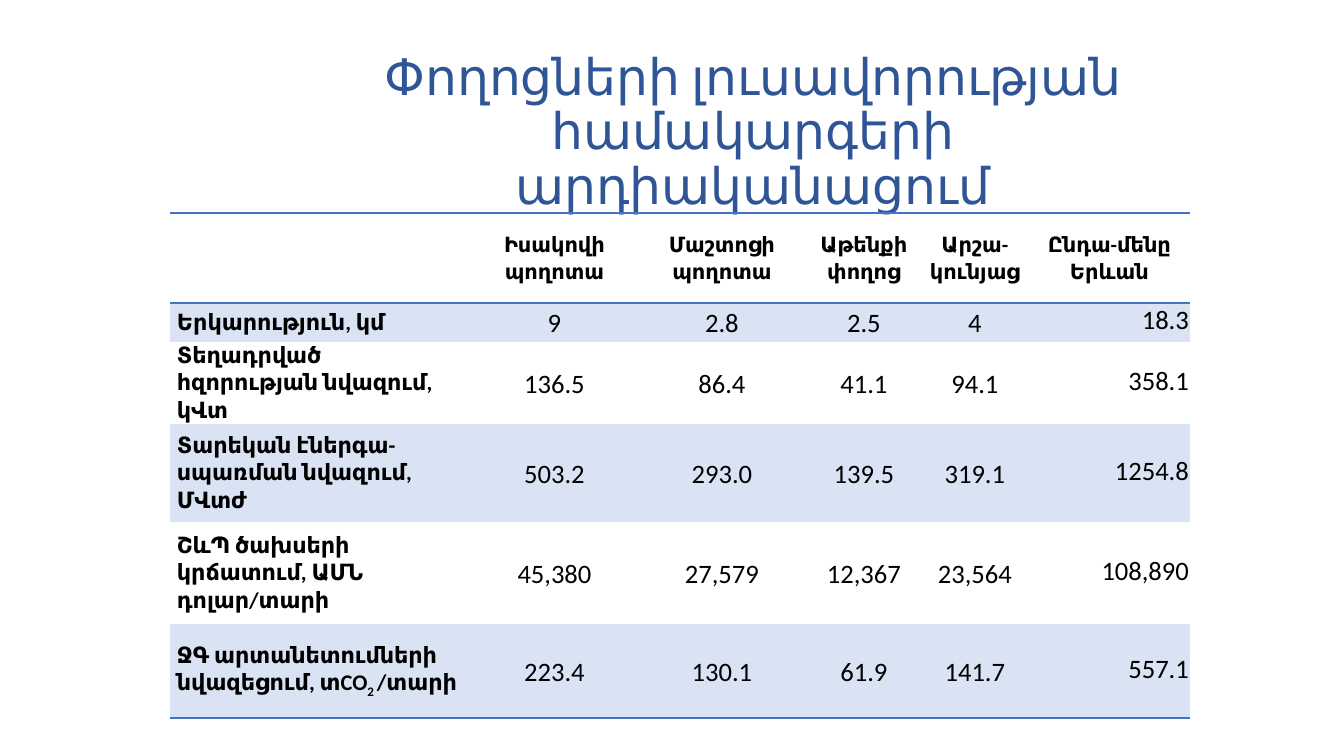
from lxml.etree import SubElement
from pptx import Presentation
from pptx.dml.color import RGBColor
from pptx.enum.text import MSO_ANCHOR as Anchor, MSO_AUTO_SIZE as AutoSize, PP_ALIGN as Align
from pptx.oxml.ns import qn
from pptx.util import Emu, Pt

COLORS = {"title": "2F5597", "text": "000000", "rule": "4472C4", "band": "DAE3F3"}
FONT = "Calibri"
PLAIN_TABLE_STYLE = "{2D5ABB26-0587-4C30-8999-92F81FD0307C}"

TITLE = "Փողոցների լուսավորության համակարգերի արդիականացում"
STREETS = ["", "Իսակովի պողոտա", "Մաշտոցի պողոտա", "Աթենքի փողոց",
           "Արշա-կունյաց", "Ընդա-մենը\nԵրևան"]
SAVINGS = [
    ["Երկարություն, կմ", "9", "2.8", "2.5", "4", "18.3"],
    ["Տեղադրված հզորության նվազում, կՎտ", "136.5", "86.4", "41.1", "94.1", "358.1"],
    ["Տարեկան էներգա-սպառման նվազում, ՄՎտժ", "503.2", "293.0", "139.5", "319.1", "1254.8"],
    ["ՇևՊ ծախսերի կրճատում, ԱՄՆ դոլար/տարի", "45,380", "27,579", "12,367", "23,564", "108,890"],
    ["ՋԳ արտանետումների նվազեցում, տCO", "223.4", "130.1", "61.9", "141.7", "557.1"],
]
CO2_TAIL = ["2 ", "/տարի"]
COLUMN_WIDTHS = [302, 165, 170, 114, 108, 161]
ROW_HEIGHTS = [90, 39, 82, 98, 102, 94]


def px(length):
    return Emu(round(length * 914400 / 100.8))


def color(name):
    return RGBColor.from_string(COLORS[name])


def format_text(frame, size, color_name, bold, align, spacing):
    for paragraph in frame.paragraphs:
        paragraph.alignment = align
        paragraph.line_spacing = spacing
        for run in paragraph.runs:
            run.font.name = FONT
            run.font.size = Pt(size)
            run.font.bold = bold
            run.font.color.rgb = color(color_name)


def add_rule(cell, side):
    """Draw a cell border; side is lnT or lnB. Call before setting the fill."""
    line = SubElement(cell._tc.get_or_add_tcPr(), qn(f"a:{side}"), w=str(Pt(1)))
    solid = SubElement(line, qn("a:solidFill"))
    SubElement(solid, qn("a:srgbClr"), val=COLORS["rule"])


def add_title(slide, left, top, width, height):
    title = slide.shapes.title
    title.left, title.top, title.width, title.height = map(px, (left, top, width, height))
    frame = title.text_frame
    frame.text = TITLE
    frame.word_wrap = True
    frame.auto_size = AutoSize.NONE
    frame.vertical_anchor = Anchor.MIDDLE
    format_text(frame, 36, "title", False, Align.CENTER, 0.9)


def fill_cell(cell, text, row, column):
    is_total = row > 0 and column == len(COLUMN_WIDTHS) - 1
    cell.margin_left = cell.margin_right = px(1 if is_total else 7)
    cell.margin_top = px(1 if is_total else 0)
    cell.margin_bottom = px(5 if is_total else 0)
    cell.vertical_anchor = Anchor.MIDDLE
    if row == 0:
        add_rule(cell, "lnT")
    if row in (0, len(SAVINGS)):
        add_rule(cell, "lnB")
    if row % 2:
        cell.fill.solid()
        cell.fill.fore_color.rgb = color("band")
    else:
        cell.fill.background()

    frame = cell.text_frame
    frame.text = text
    if row == 0:
        format_text(frame, 15, "text", True, Align.CENTER, 1.07)
    elif column == 0:
        if text.endswith("CO"):
            for part in CO2_TAIL:
                frame.paragraphs[0].add_run().text = part
        format_text(frame, 16, "text", True, Align.LEFT, 1.0)
        if text.endswith("CO"):
            subscript = frame.paragraphs[0].runs[1]
            subscript.font._element.set("baseline", "-25000")
    elif is_total:
        format_text(frame, 19, "text", False, Align.RIGHT, 1.0)
    else:
        format_text(frame, 19, "text", False, Align.CENTER, 1.07)


def add_savings_table(slide, left, top):
    rows = [STREETS, *SAVINGS]
    table = slide.shapes.add_table(
        len(rows), len(STREETS), px(left), px(top),
        px(sum(COLUMN_WIDTHS)), px(sum(ROW_HEIGHTS))).table
    table._tbl.tblPr.find(qn("a:tableStyleId")).text = PLAIN_TABLE_STYLE
    table.horz_banding = False
    for column, width in zip(table.columns, COLUMN_WIDTHS):
        column.width = px(width)
    for row, height in zip(table.rows, ROW_HEIGHTS):
        row.height = px(height)
    for r, texts in enumerate(rows):
        for c, text in enumerate(texts):
            fill_cell(table.cell(r, c), text, r, c)


def main():
    deck = Presentation()
    deck.slide_width, deck.slide_height = px(1344), px(756)
    slide = deck.slides.add_slide(deck.slide_layouts[5])
    add_title(slide, 306, 71, 894, 125)
    add_savings_table(slide, 170, 213)
    deck.save("out.pptx")


if __name__ == "__main__":
    main()
